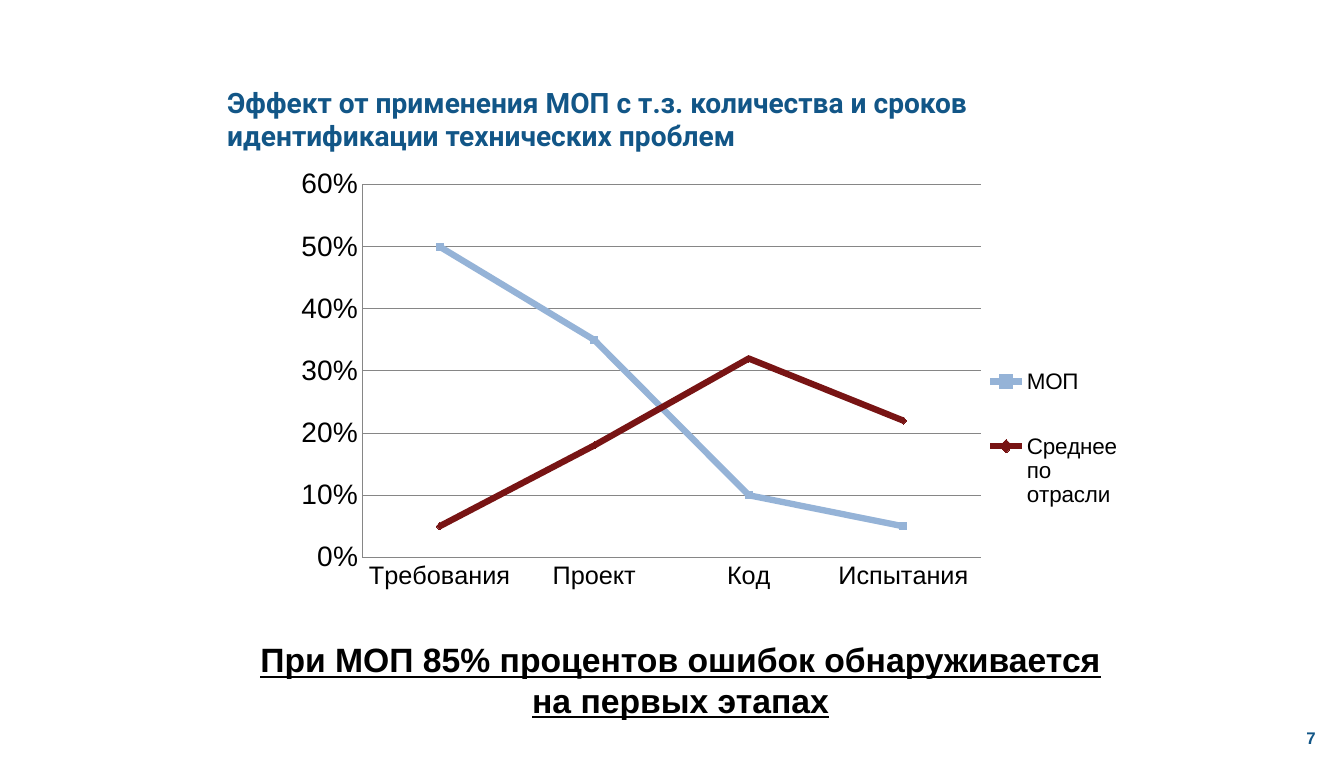
from lxml.etree import SubElement
from pptx import Presentation
from pptx.chart.data import CategoryChartData
from pptx.dml.color import RGBColor
from pptx.enum.chart import XL_CHART_TYPE as ChartType
from pptx.enum.chart import XL_LEGEND_POSITION as LegendPosition
from pptx.enum.chart import XL_MARKER_STYLE as MarkerStyle
from pptx.enum.chart import XL_TICK_MARK as TickMark
from pptx.enum.text import MSO_ANCHOR as Anchor
from pptx.enum.text import PP_ALIGN as Align
from pptx.oxml.ns import qn
from pptx.util import Inches, Pt

COLORS = {
    "heading": "125687",
    "text": "000000",
    "grid": "868686",
    "method": "95B3D7",
    "industry": "781414",
}
STAGES = ["Требования", "Проект", "Код", "Испытания"]
SERIES = [
    ("МОП", [0.5, 0.35, 0.1, 0.05], "method", MarkerStyle.SQUARE),
    ("Среднее по отрасли", [0.05, 0.18, 0.32, 0.22], "industry", MarkerStyle.DIAMOND),
]


def color(name):
    return RGBColor.from_string(COLORS[name])


def style_font(font, size, color_name="text", name="Arial", bold=False):
    font.name = name
    font.size = Pt(size)
    font.bold = bold
    font.color.rgb = color(color_name)


def add_text(slide, box, text, size, color_name, name="Arial", align=Align.CENTER):
    shape = slide.shapes.add_textbox(*map(Inches, box))
    frame = shape.text_frame
    frame.word_wrap = True
    frame.vertical_anchor = Anchor.MIDDLE
    frame.text = text
    paragraph = frame.paragraphs[0]
    paragraph.alignment = align
    font = paragraph.runs[0].font
    style_font(font, size, color_name, name, bold=True)
    return font


def set_layout(parent, index, box, inner=False):
    for layout in parent.findall(qn("c:layout")):
        parent.remove(layout)
    layout = SubElement(parent, qn("c:layout"))
    parent.insert(index, layout)
    manual = SubElement(layout, qn("c:manualLayout"))
    settings = [("layoutTarget", "inner")] if inner else []
    settings += [("xMode", "edge"), ("yMode", "edge")]
    settings += zip("xywh", box)
    for tag, value in settings:
        SubElement(manual, qn(f"c:{tag}")).set("val", str(value))


def style_line(line, color_name, width):
    line.color.rgb = color(color_name)
    line.width = Pt(width)


def style_axis(axis, size):
    axis.major_tick_mark = TickMark.NONE
    axis.minor_tick_mark = TickMark.NONE
    style_line(axis.format.line, "grid", 0.75)
    style_font(axis.tick_labels.font, size)


def style_series(series, color_name, marker_style):
    series.smooth = False
    style_line(series.format.line, color_name, 4.5)
    marker = series.marker
    marker.style = marker_style
    marker.size = 5
    marker.format.fill.solid()
    marker.format.fill.fore_color.rgb = color(color_name)
    marker.format.line.color.rgb = color(color_name)


def add_line_chart(slide, box):
    data = CategoryChartData(number_format="0%")
    data.categories = STAGES
    for name, values, _, _ in SERIES:
        data.add_series(name, values)
    frame = slide.shapes.add_chart(ChartType.LINE_MARKERS, *map(Inches, box), data)
    chart = frame.chart
    chart.has_title = False
    style_font(chart.font, 10)
    chart.plots[0].vary_by_categories = False

    style_axis(chart.category_axis, 18)
    value_axis = chart.value_axis
    style_axis(value_axis, 20)
    value_axis.minimum_scale = 0
    value_axis.maximum_scale = 0.6
    value_axis.major_unit = 0.1
    value_axis.tick_labels.number_format = "0%"
    value_axis.tick_labels.number_format_is_linked = False
    value_axis.has_major_gridlines = True
    style_line(value_axis.major_gridlines.format.line, "grid", 0.75)

    for series, (_, _, color_name, marker_style) in zip(chart.plots[0].series, SERIES):
        style_series(series, color_name, marker_style)

    chart.has_legend = True
    chart.legend.position = LegendPosition.RIGHT
    chart.legend.include_in_layout = False
    style_font(chart.legend.font, 16)

    chart_root = chart.element.find(qn("c:chart"))
    set_layout(chart_root.find(qn("c:plotArea")), 0, (0.11, 0.05, 0.72, 0.75), inner=True)
    set_layout(chart_root.find(qn("c:legend")), 1, (0.83, 0.34, 0.17, 0.44))


def main():
    presentation = Presentation()
    presentation.slide_width = Inches(13.3)
    presentation.slide_height = Inches(7.5)
    slide = presentation.slides.add_slide(presentation.slide_layouts[6])
    add_text(slide, (12.64, 7.09, 0.67, 0.42), "7", 12, "heading")
    add_text(
        slide,
        (2.15, 0.79, 9.25, 0.77),
        "Эффект от применения МОП с т.з. количества и сроков идентификации технических проблем",
        20,
        "heading",
        "Roboto",
        Align.LEFT,
    )
    add_line_chart(slide, (2.65, 1.58, 8.5, 4.92))
    conclusion_font = add_text(
        slide,
        (2.32, 6.27, 8.83, 0.91),
        "При МОП 85% процентов ошибок обнаруживается на первых этапах",
        24,
        "text",
    )
    conclusion_font.underline = True
    presentation.save("out.pptx")


if __name__ == "__main__":
    main()
